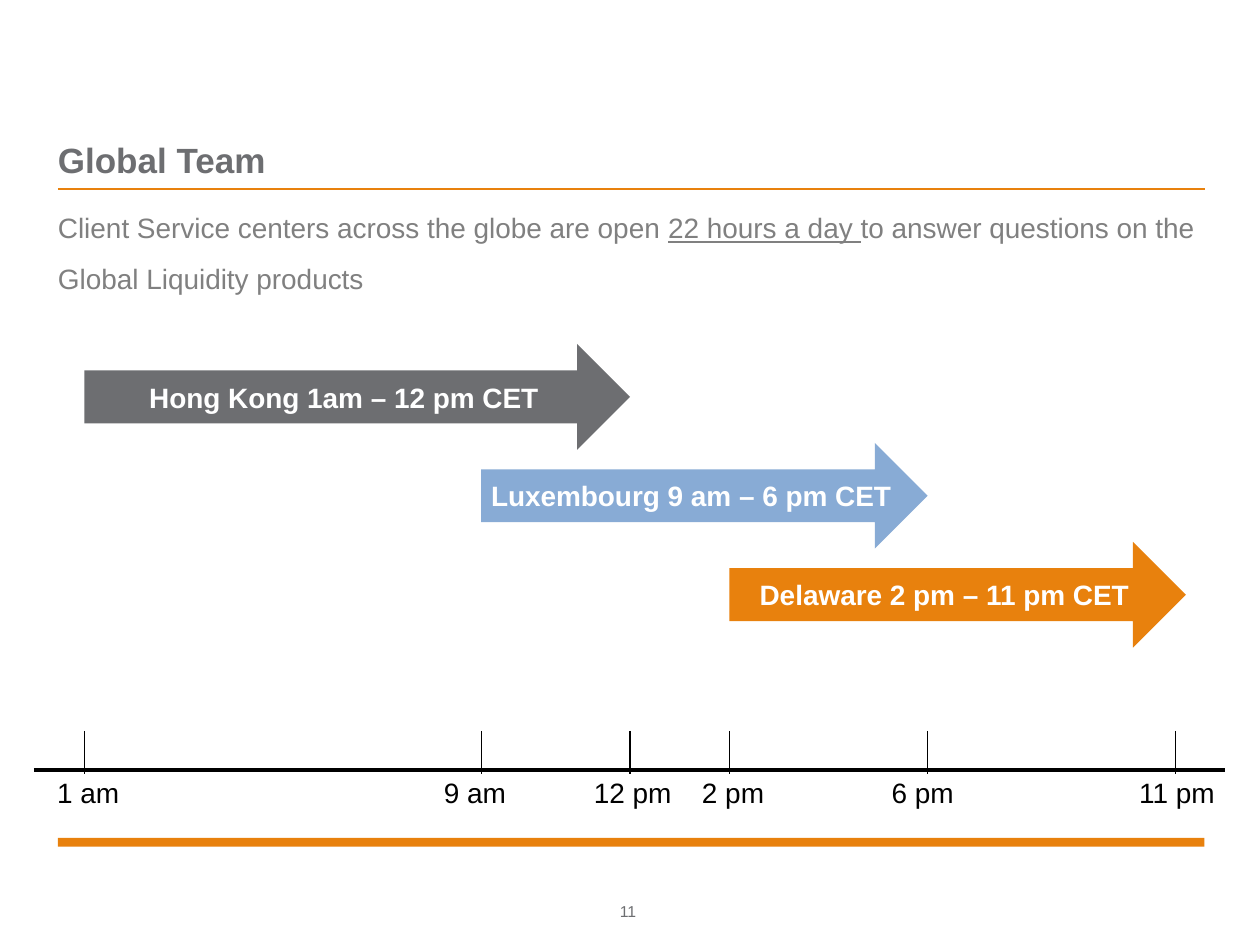
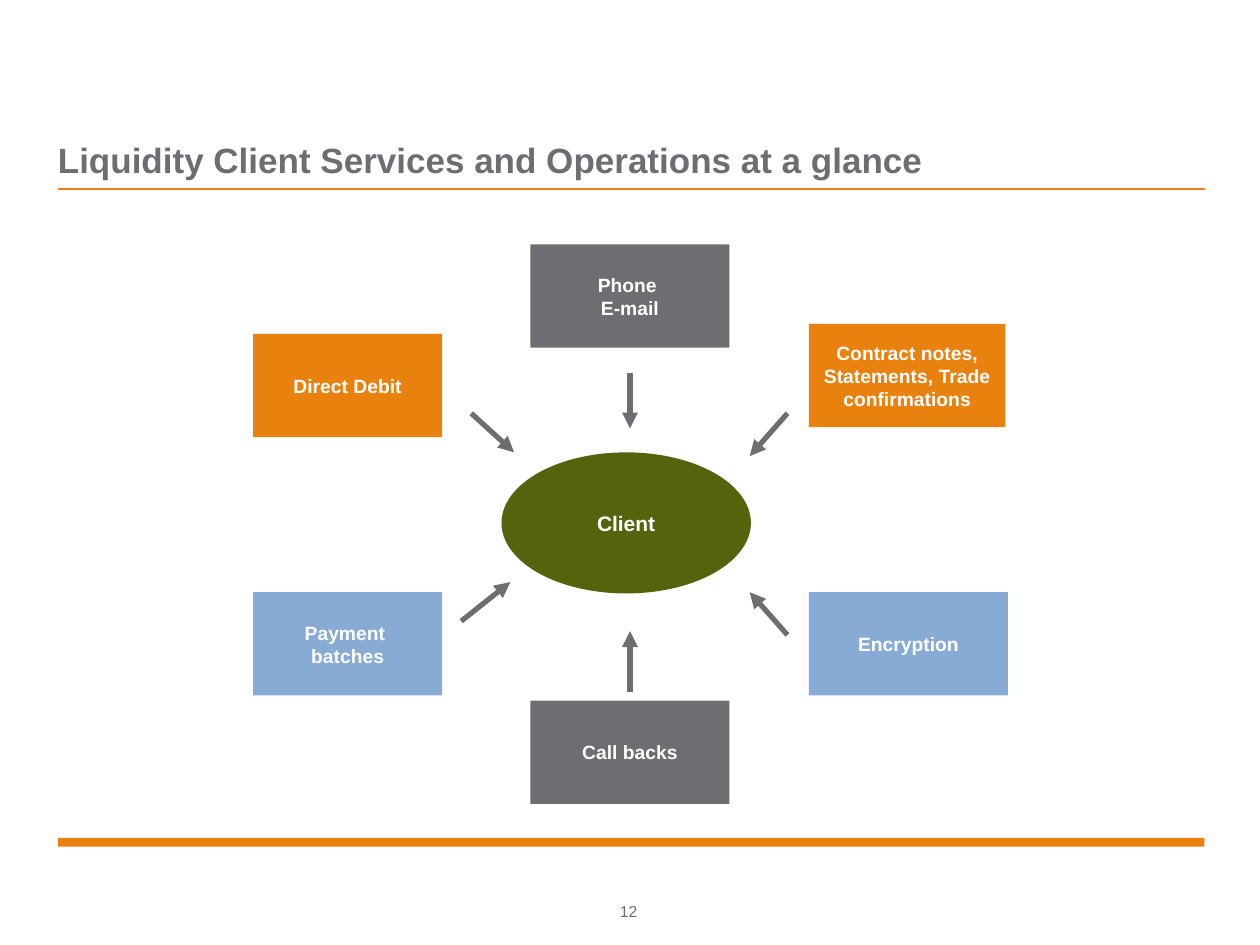
from typing import NamedTuple

from lxml.etree import SubElement
from pptx import Presentation
from pptx.dml.color import RGBColor
from pptx.enum.shapes import MSO_CONNECTOR, MSO_SHAPE
from pptx.enum.text import MSO_ANCHOR as Anchor, PP_ALIGN as Align
from pptx.oxml.ns import qn
from pptx.shapes.autoshape import Shape
from pptx.shapes.connector import Connector
from pptx.slide import Slide
from pptx.text.text import TextFrame
from pptx.util import Inches, Pt

FONT = "Arial"
GRAY = RGBColor(0x6D, 0x6E, 0x71)
BODY_GRAY = RGBColor(0x80, 0x80, 0x80)
BLUE = RGBColor(0x88, 0xAB, 0xD5)
ORANGE = RGBColor(0xE8, 0x81, 0x0D)
GREEN = RGBColor(0x54, 0x64, 0x0D)
BLACK = RGBColor(0, 0, 0)
WHITE = RGBColor(0xFF, 0xFF, 0xFF)

MARGIN, CONTENT_WIDTH = 0.46, 9.1
NO_INSETS = (0, 0, 0, 0)
BOX_INSETS = (0.08, 0.04, 0.08, 0.04)

AXIS_START, AXIS_HOUR, HOUR_WIDTH = 0.67, 1, 0.3937
AXIS_TOP = 6.11
SHIFT_TOP, SHIFT_STEP, SHIFT_HEIGHT = 2.73, 0.785, 0.84
BOX_HEIGHT = 0.82


class Box(NamedTuple):
    left: float
    top: float
    width: float
    height: float


class Tick(NamedTuple):
    hour: int
    label: str
    nudge: float


class Shift(NamedTuple):
    text: str
    start: int
    end: int
    overshoot: float
    color: RGBColor


class Service(NamedTuple):
    text: str
    left: float
    top: float
    width: float
    color: RGBColor


class Arrow(NamedTuple):
    x1: float
    y1: float
    x2: float
    y2: float


TICKS = [
    Tick(1, "1 am", 0.03),
    Tick(9, "9 am", -0.05),
    Tick(12, "12 pm", 0.02),
    Tick(14, "2 pm", 0.03),
    Tick(18, "6 pm", -0.04),
    Tick(23, "11 pm", 0.01),
]
SHIFTS = [
    Shift("Hong Kong 1am – 12 pm CET", 1, 12, 0, GRAY),
    Shift("Luxembourg 9 am – 6 pm CET", 9, 18, 0, BLUE),
    Shift("Delaware 2 pm – 11 pm CET", 14, 23, 0.08, ORANGE),
]
SERVICES = [
    Service("Phone \nE-mail", 4.21, 1.94, 1.58, GRAY),
    Service("Contract notes, Statements, Trade confirmations", 6.42, 2.57, 1.56, ORANGE),
    Service("Encryption", 6.42, 4.7, 1.58, BLUE),
    Service("Call backs", 4.21, 5.56, 1.58, GRAY),
    Service("Payment \nbatches", 2.01, 4.7, 1.5, BLUE),
    Service("Direct Debit", 2.01, 2.65, 1.5, ORANGE),
]
CLIENT_ARROWS = [
    Arrow(5, 2.96, 5, 3.4),
    Arrow(6.25, 3.28, 5.95, 3.62),
    Arrow(6.25, 5.04, 5.95, 4.7),
    Arrow(5, 5.49, 5, 5.01),
    Arrow(3.66, 4.93, 4.05, 4.62),
    Arrow(3.74, 3.28, 4.08, 3.59),
]


def set_frame(frame: TextFrame, insets: tuple, anchor: Anchor) -> None:
    frame.word_wrap = True
    frame.vertical_anchor = anchor
    (frame.margin_left, frame.margin_top,
     frame.margin_right, frame.margin_bottom) = map(Inches, insets)


def format_text(frame: TextFrame, size: float, color: RGBColor,
                bold: bool = False, align: Align = Align.LEFT) -> None:
    for paragraph in frame.paragraphs:
        paragraph.alignment = align
        for run in paragraph.runs:
            run.font.name = FONT
            run.font.size = Pt(size)
            run.font.bold = bold
            run.font.color.rgb = color


def add_text(slide: Slide, box: Box, text: str, size: float, color: RGBColor,
             bold: bool = False, align: Align = Align.LEFT,
             anchor: Anchor = Anchor.BOTTOM, insets: tuple = NO_INSETS) -> TextFrame:
    frame = slide.shapes.add_textbox(*map(Inches, box)).text_frame
    set_frame(frame, insets, anchor)
    frame.text = text
    format_text(frame, size, color, bold, align)
    return frame


def add_filled(slide: Slide, kind: MSO_SHAPE, box: Box, color: RGBColor) -> Shape:
    shape = slide.shapes.add_shape(kind, *map(Inches, box))
    shape.shadow.inherit = False
    shape.fill.solid()
    shape.fill.fore_color.rgb = color
    shape.line.fill.background()
    return shape


def add_labelled(slide: Slide, kind: MSO_SHAPE, box: Box, color: RGBColor,
                 text: str, size: float, insets: tuple = BOX_INSETS) -> None:
    """Draw a filled shape with bold white centred text."""
    frame = add_filled(slide, kind, box, color).text_frame
    set_frame(frame, insets, Anchor.MIDDLE)
    frame.text = text
    format_text(frame, size, WHITE, bold=True, align=Align.CENTER)


def add_line(slide: Slide, ends: Arrow, color: RGBColor, width: float) -> Connector:
    line = slide.shapes.add_connector(MSO_CONNECTOR.STRAIGHT, *map(Inches, ends))
    line.line.color.rgb = color
    line.line.width = Pt(width)
    SubElement(line._element.spPr, qn("a:effectLst"))
    return line


def add_arrow(slide: Slide, ends: Arrow) -> None:
    outline = add_line(slide, ends, GRAY, 3).line._get_or_add_ln()
    SubElement(outline, qn("a:tailEnd"), type="triangle")


def add_base_slide(prs: Presentation, title: str, number: int) -> Slide:
    """Add a slide with the shared title, rule, footer band and page number."""
    slide = prs.slides.add_slide(prs.slide_layouts[6])
    add_filled(slide, MSO_SHAPE.RECTANGLE, Box(MARGIN, 6.65, CONTENT_WIDTH, 0.07), ORANGE)
    add_line(slide, Arrow(MARGIN, 1.5, MARGIN + CONTENT_WIDTH, 1.5), ORANGE, 1)
    add_text(slide, Box(MARGIN, 0.48, CONTENT_WIDTH, 0.95), title, 20, GRAY, bold=True)
    add_text(slide, Box(4.92, 7.16, 0.3, 0.15), str(number), 9, GRAY)
    return slide


def hour_x(hour: int) -> float:
    return AXIS_START + (hour - AXIS_HOUR) * HOUR_WIDTH


def build_global_team(prs: Presentation) -> None:
    slide = add_base_slide(prs, "Global Team", 11)
    intro = add_text(slide, Box(MARGIN, 1.47, 9.11, 0.94),
                     "Client Service centers across the globe are open ", 16, BODY_GRAY,
                     anchor=Anchor.TOP, insets=(0, 0.07, 0.07, 0.07))
    sentence = intro.paragraphs[0]
    sentence.line_spacing = 1.5
    opening_hours = sentence.add_run()
    opening_hours.text = "22 hours a day "
    opening_hours.font.underline = True
    sentence.add_run().text = "to answer questions on the Global Liquidity products"
    format_text(intro, 16, BODY_GRAY)

    add_line(slide, Arrow(0.27, AXIS_TOP, 9.72, AXIS_TOP), BLACK, 2.25)
    for tick in TICKS:
        x = hour_x(tick.hour)
        add_line(slide, Arrow(x, 5.8, x, 6.14), BLACK, 0.75)
        add_text(slide, Box(x + tick.nudge - 0.42, AXIS_TOP, 0.84, 0.37), tick.label,
                 16, BLACK, align=Align.CENTER, anchor=Anchor.TOP,
                 insets=(0, 0.05, 0, 0.05))

    for row, shift in enumerate(SHIFTS):
        left = hour_x(shift.start)
        box = Box(left, SHIFT_TOP + row * SHIFT_STEP,
                  hour_x(shift.end) + shift.overshoot - left, SHIFT_HEIGHT)
        add_labelled(slide, MSO_SHAPE.RIGHT_ARROW, box, shift.color, shift.text, 16, NO_INSETS)


def build_services(prs: Presentation) -> None:
    slide = add_base_slide(prs, "Liquidity Client Services and Operations at a glance", 12)
    add_labelled(slide, MSO_SHAPE.OVAL, Box(3.98, 3.59, 1.98, 1.12), GREEN, "Client", 12)
    for service in SERVICES:
        box = Box(service.left, service.top, service.width, BOX_HEIGHT)
        add_labelled(slide, MSO_SHAPE.RECTANGLE, box, service.color, service.text, 11)
    for arrow in CLIENT_ARROWS:
        add_arrow(slide, arrow)


def main() -> None:
    prs = Presentation()
    prs.slide_width, prs.slide_height = Inches(10), Inches(7.5)
    build_global_team(prs)
    build_services(prs)
    prs.save("out.pptx")


if __name__ == "__main__":
    main()
